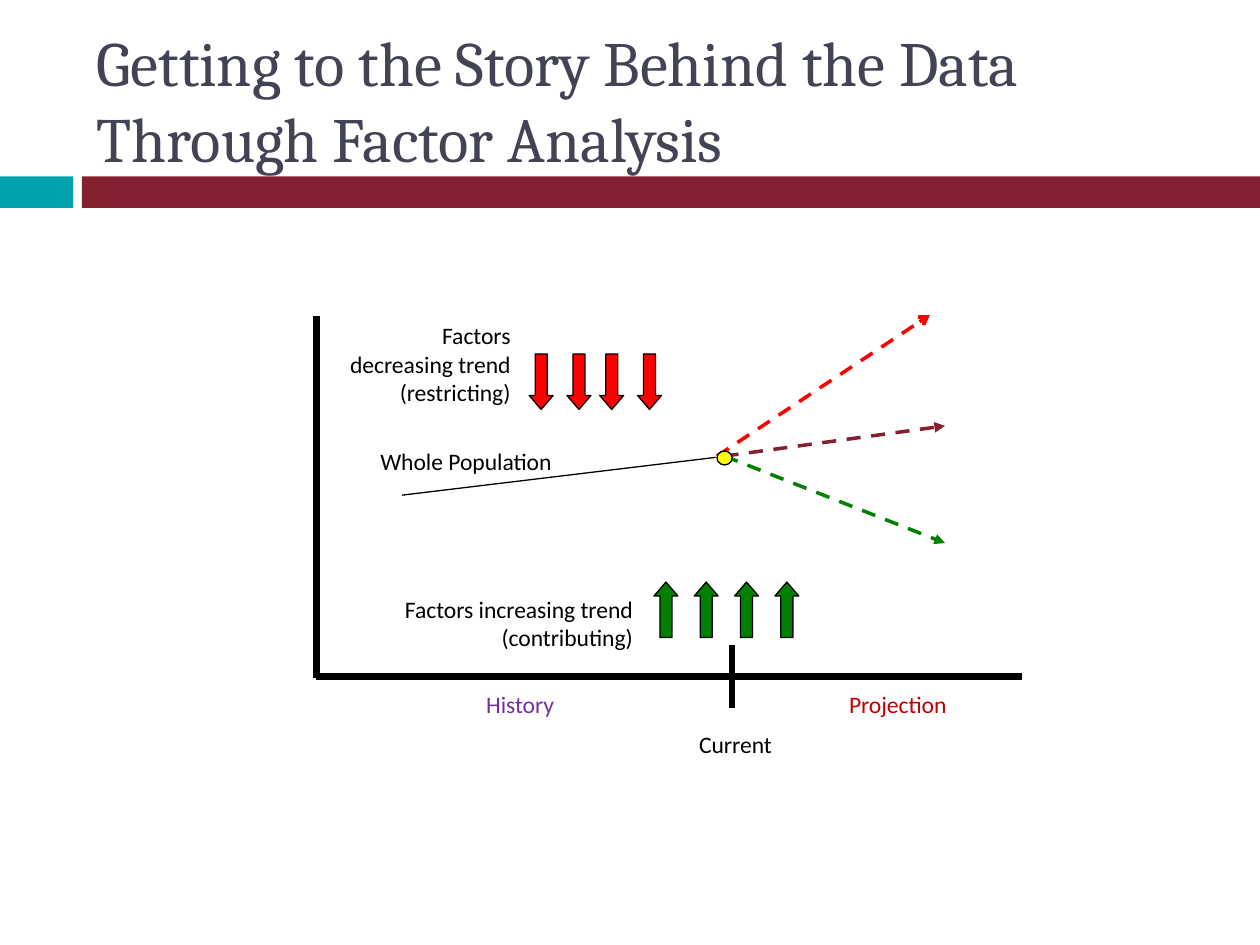
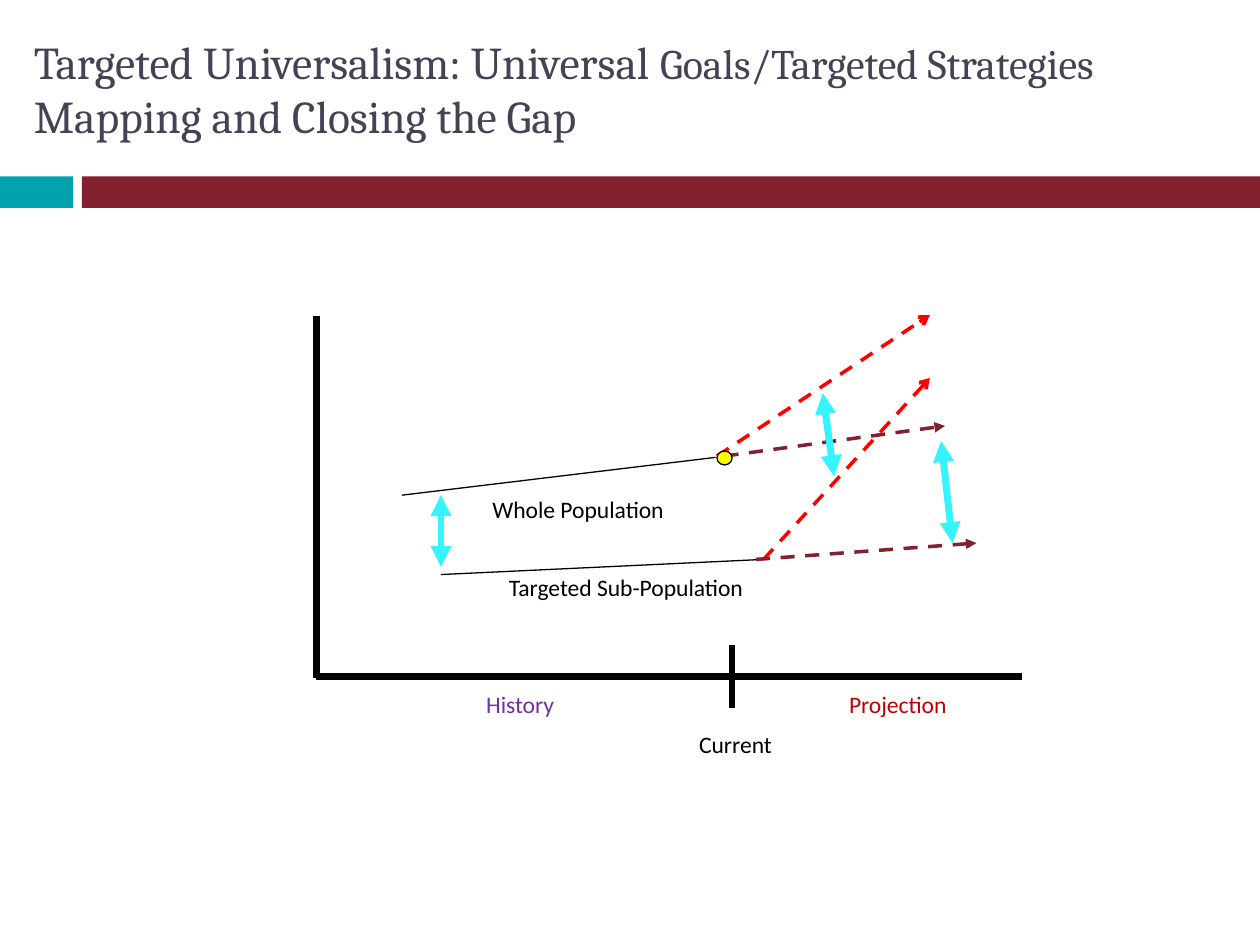
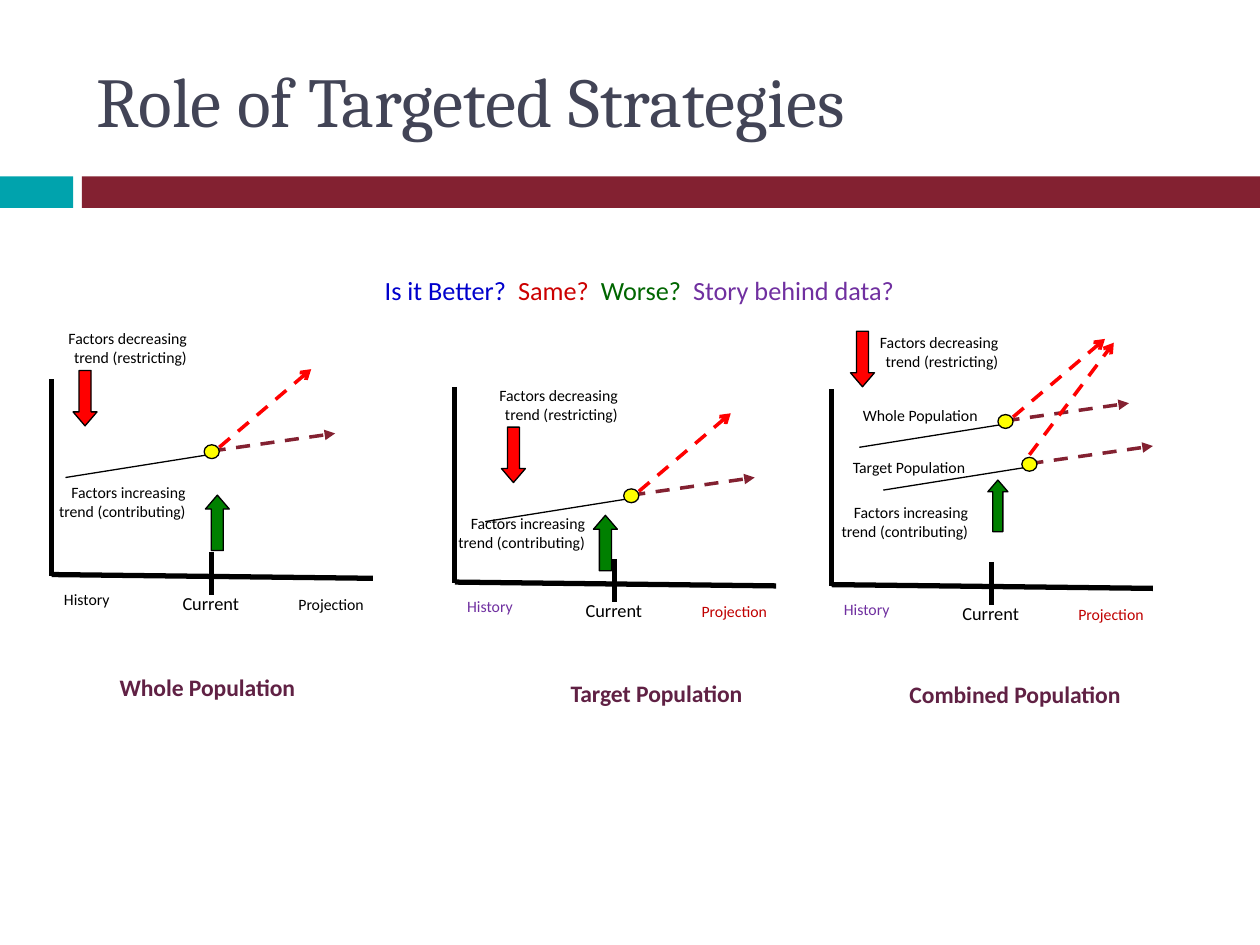
from lxml import etree
from pptx import Presentation
from pptx.dml.color import RGBColor
from pptx.enum.dml import MSO_LINE
from pptx.enum.shapes import MSO_CONNECTOR, MSO_SHAPE
from pptx.enum.text import MSO_ANCHOR, PP_ALIGN
from pptx.oxml.ns import qn
from pptx.util import Inches, Pt

RECT, OVAL = MSO_SHAPE.RECTANGLE, MSO_SHAPE.OVAL
UP, DOWN = MSO_SHAPE.UP_ARROW, MSO_SHAPE.DOWN_ARROW
LEFT, CENTER, RIGHT = PP_ALIGN.LEFT, PP_ALIGN.CENTER, PP_ALIGN.RIGHT
TOP, MIDDLE = MSO_ANCHOR.TOP, MSO_ANCHOR.MIDDLE
STRAIGHT, DASH = MSO_CONNECTOR.STRAIGHT, MSO_LINE.DASH

BLACK, RED, GREEN, YELLOW, CYAN = "000000", "FF0000", "008000", "FFFF00", "35F3FF"
MAROON, TEAL, SLATE, PLUM = "832131", "00A3AD", "424456", "602144"
PURPLE, DARK_RED = "7030A0", "C00000"
BODY_FONT, TITLE_FONT = "Calibri", "Cambria"

BANDS = [((0, 1.4, 0.58, 0.25), TEAL), ((0.65, 1.4, 9.35, 0.25), MAROON)]
TITLE_BOX = (0.67, 0.25, 8.92, 1.08)
WIDE_TITLE_BOX = (0.17, 0.16, 9.74, 1.08)

FACTOR_TITLE = [[("Getting to the Story Behind the Data Through Factor Analysis", 36)]]
GAP_TITLE = [
    [("Targeted Universalism: Universal ", 26), ("Goals/Targeted Strategies", 24)],
    [("Mapping and Closing the Gap", 26)],
]
ROLE_TITLE = [[("Role of Targeted Strategies", 40)]]

DECREASING = "Factors decreasing trend (restricting)"
INCREASING = "Factors increasing trend (contributing)"
QUESTIONS = [
    ("Is it Better?", "0000CC"),
    ("Same?", "CC0000"),
    ("Worse?", "006600"),
    ("Story behind data?", PURPLE),
]

BIG_DOT = (5.69, 3.58)
BETTER_PATH = ((5.69, 3.62), (7.38, 2.5))
SAME_PATH = ((5.75, 3.62), (7.5, 3.38))
WORSE_PATH = ((5.75, 3.62), (7.5, 4.31))
TIMELINE = [
    ("History", (3.76, 5.43, 0.81, 0.33), PURPLE),
    ("Current", (5.45, 5.74, 0.88, 0.33), BLACK),
    ("Projection", (6.64, 5.43, 1.24, 0.33), DARK_RED),
]
RESTRICTING_X = [4.2, 4.5, 4.76, 5.06]
CONTRIBUTING_X = [5.19 + 0.32 * i for i in range(4)]
GAPS = [((3.5, 3.93), (3.5, 4.5)), ((7.47, 3.5), (7.56, 4.31)), ((6.53, 3.12), (6.62, 3.78))]

STEEP = ((0.12, 0.02), (0.85, -0.6))
STEEPER = ((0.06, -0.02), (0.73, -0.91))
PANELS = [
    {
        "name": ("Whole Population", (0.85, 5.29, 1.75, 0.56)),
        "origin": (0.41, 3.01),
        "time_colors": (BLACK, BLACK),
        "trends": [((1.62, 3.53), STEEP)],
        "decreasing": ((0.33, 2.56), (0.58, 2.94)),
        "increasing": ((0.33, 3.78), (1.63, 3.93, 0.19, 0.44)),
        "labels": [],
    },
    {
        "name": ("Target Population", (4.43, 5.34, 1.75, 0.56)),
        "origin": (3.61, 3.07),
        "time_colors": (PURPLE, DARK_RED),
        "trends": [((4.95, 3.88), STEEP)],
        "decreasing": ((3.75, 3.01), (3.98, 3.39)),
        "increasing": ((3.5, 4.03), (4.71, 4.09, 0.19, 0.44)),
        "labels": [],
    },
    {
        "name": ("Combined Population", (7.12, 5.35, 2.03, 0.56)),
        "origin": (6.6, 3.09),
        "time_colors": (PURPLE, DARK_RED),
        "trends": [((7.92, 3.29), STEEP), ((8.11, 3.63), STEEPER)],
        "decreasing": ((6.77, 2.59), (6.75, 2.63)),
        "increasing": ((6.54, 3.94), (7.84, 3.81, 0.16, 0.41)),
        "labels": [
            ("Whole Population", (6.75, 3.17, 1.75, 0.25)),
            ("Target Population", (6.67, 3.58, 1.2, 0.25)),
        ],
    },
]


def rgb(color):
    return RGBColor.from_string(color)


def inches(values):
    return [Inches(value) for value in values]


def shift(origin, point):
    return origin[0] + point[0], origin[1] + point[1]


def add_run(paragraph, text, size, color, font=BODY_FONT, bold=False):
    run = paragraph.add_run()
    run.text = text
    for key, value in {"name": font, "size": Pt(size), "bold": bold}.items():
        setattr(run.font, key, value)
    run.font.color.rgb = rgb(color)
    return run


def add_paragraph_box(slide, box, align=LEFT, anchor=TOP):
    frame = slide.shapes.add_textbox(*inches(box)).text_frame
    for key, value in {"word_wrap": True, "vertical_anchor": anchor}.items():
        setattr(frame, key, value)
    paragraph = frame.paragraphs[0]
    paragraph.alignment = align
    return paragraph


def add_label(slide, text, box, size=13.5, color=BLACK, align=LEFT, bold=False):
    add_run(add_paragraph_box(slide, box, align), text, size, color, bold=bold)


def add_block(slide, kind, box, fill, outlined=True):
    block = slide.shapes.add_shape(kind, *inches(box))
    block.shadow.inherit = False
    block.fill.solid()
    block.fill.fore_color.rgb = rgb(fill)
    if outlined:
        block.line.color.rgb = rgb(BLACK)
        block.line.width = Pt(0.75)
    else:
        block.line.fill.background()
    return block


def add_factor_arrow(slide, kind, box):
    arrow = add_block(slide, kind, box, GREEN if kind == UP else RED)
    arrow.adjustments[0], arrow.adjustments[1] = 0.5, 0.583


def add_dot(slide, corner):
    add_block(slide, OVAL, (*corner, 0.12, 0.11), YELLOW)


def add_line(slide, start, end, width, color=BLACK, dashed=False, head=None, tail=None):
    connector = slide.shapes.add_connector(STRAIGHT, *inches((*start, *end)))
    connector.line.color.rgb = rgb(color)
    connector.line.width = Pt(width)
    if dashed:
        connector.line.dash_style = DASH
    outline = connector.line._get_or_add_ln()
    for tag, kind in (("a:headEnd", head), ("a:tailEnd", tail)):
        if kind:
            etree.SubElement(outline, qn(tag), type=kind)
    etree.SubElement(connector._element.spPr, qn("a:effectLst"))


def add_better(slide, start, end):
    add_line(slide, start, end, 2, RED, dashed=True, tail="arrow")


def add_forecast(slide, start, end, color=MAROON):
    add_line(slide, start, end, 2, color, dashed=True, tail="triangle")


def start_slide(deck, title, box=TITLE_BOX):
    slide = deck.slides.add_slide(deck.slide_layouts[6])
    for band, color in BANDS:
        add_block(slide, RECT, band, color, outlined=False)
    paragraph = add_paragraph_box(slide, box, anchor=MIDDLE)
    for number, line in enumerate(title):
        if number:
            paragraph.add_line_break()
        for text, size in line:
            add_run(paragraph, text, size, SLATE, TITLE_FONT)
    return slide


def add_big_graph(slide):
    add_line(slide, (2.51, 5.37), (8.11, 5.37), 4)
    add_line(slide, (2.51, 2.51), (2.51, 5.38), 4)
    add_line(slide, (5.81, 5.12), (5.81, 5.62), 3)
    add_line(slide, (3.19, 3.93), (5.68, 3.63), 0.75)
    add_better(slide, *BETTER_PATH)
    add_forecast(slide, *SAME_PATH)
    for text, box, color in TIMELINE:
        add_label(slide, text, box, color=color)


def build_factor_slide(deck):
    slide = start_slide(deck, FACTOR_TITLE)
    add_big_graph(slide)
    add_forecast(slide, *WORSE_PATH, GREEN)
    add_dot(slide, BIG_DOT)
    add_label(slide, DECREASING, (2.58, 2.5, 1.57, 1.01), align=RIGHT)
    add_label(slide, "Whole Population", (2.92, 3.5, 1.75, 0.33))
    add_label(slide, INCREASING, (3, 4.67, 2.12, 0.56), align=RIGHT)
    for kind, top, lefts in ((DOWN, 2.81, RESTRICTING_X), (UP, 4.62, CONTRIBUTING_X)):
        for left in lefts:
            add_factor_arrow(slide, kind, (left, top, 0.19, 0.44))


def build_gap_slide(deck):
    slide = start_slide(deck, GAP_TITLE, WIDE_TITLE_BOX)
    add_big_graph(slide)
    add_dot(slide, BIG_DOT)
    add_label(slide, "Whole Population", (3.81, 3.88, 1.75, 0.33))
    add_label(slide, "Targeted Sub-Population", (3.94, 4.5, 2.75, 0.33))
    add_line(slide, (3.5, 4.56), (6.06, 4.44), 0.75)
    add_better(slide, (6.06, 4.44), (7.38, 3))
    add_forecast(slide, (6, 4.44), (7.75, 4.31))
    for start, end in GAPS:
        add_line(slide, start, end, 4, CYAN, head="triangle", tail="triangle")


def add_trend(slide, dot, better):
    add_line(slide, shift(dot, (-1.1, 0.26)), shift(dot, (0.03, 0.08)), 0.75)
    add_better(slide, *(shift(dot, point) for point in better))
    add_forecast(slide, shift(dot, (0.06, 0.05)), shift(dot, (1.04, -0.09)))
    add_dot(slide, dot)


def add_panel(slide, panel):
    origin = panel["origin"]
    for start, end in (
        ((0, 1.55), (2.55, 1.58)),
        ((0, 0), (0, 1.56)),
        ((1.27, 1.37), (1.27, 1.71)),
    ):
        add_line(slide, shift(origin, start), shift(origin, end), 3)
    past, future = panel["time_colors"]
    for text, corner, extent, size, color in (
        ("History", (0, 1.62), (0.64, 0.25), 9, past),
        ("Current", (0.94, 1.64), (0.88, 0.28), 10.5, BLACK),
        ("Projection", (1.86, 1.66), (1.3, 0.25), 9, future),
    ):
        add_label(slide, text, (*shift(origin, corner), *extent), size, color)
    for dot, better in panel["trends"]:
        add_trend(slide, dot, better)
    for text, box in panel["labels"]:
        add_label(slide, text, box, 9)

    label, arrow = panel["decreasing"]
    add_label(slide, DECREASING, (*label, 1.25, 0.56), 9, align=RIGHT)
    add_factor_arrow(slide, DOWN, (*arrow, 0.19, 0.44))
    label, arrow = panel["increasing"]
    add_label(slide, INCREASING, (*label, 1.24, 0.56), 9, align=RIGHT)
    add_factor_arrow(slide, UP, arrow)
    name, box = panel["name"]
    add_label(slide, name, box, color=PLUM, bold=True)


def build_role_slide(deck):
    slide = start_slide(deck, ROLE_TITLE)
    paragraph = add_paragraph_box(slide, (0.46, 2.13, 9.23, 0.35), CENTER)
    for number, (question, color) in enumerate(QUESTIONS):
        if number:
            space = add_run(paragraph, " ", 15, color)
            space.font._element.set("spc", "340")
        add_run(paragraph, question, 15, color)
    for panel in PANELS:
        add_panel(slide, panel)


def main():
    deck = Presentation()
    deck.slide_width, deck.slide_height = Inches(10), Inches(7.5)
    build_factor_slide(deck)
    build_gap_slide(deck)
    build_role_slide(deck)
    deck.save("out.pptx")


if __name__ == "__main__":
    main()
